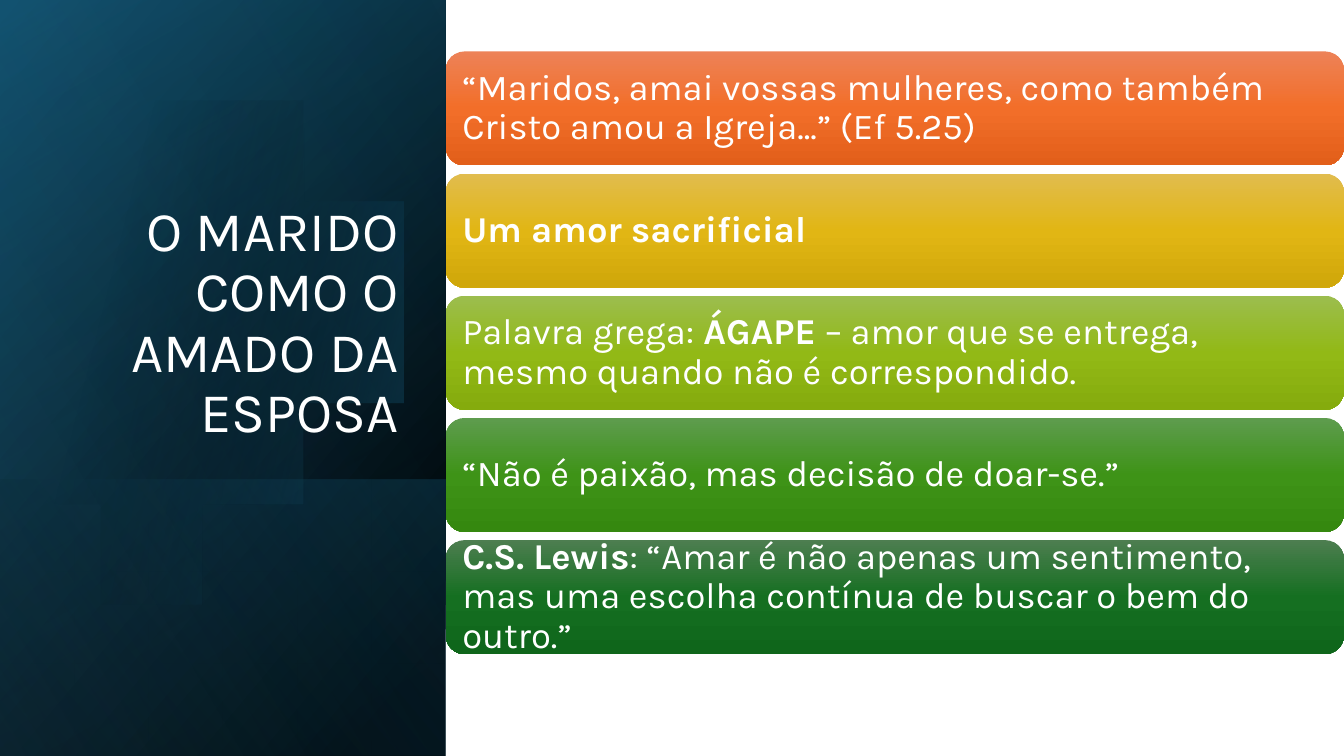
import math
import pptx
import pptx.util
import pptx.dml.color
import pptx.enum.shapes
import pptx.enum.text
import pptx.oxml
import pptx.oxml.ns

Inches, Pt = pptx.util.Inches, pptx.util.Pt
SHAPES = pptx.enum.shapes.MSO_SHAPE
ANCHOR = pptx.enum.text.MSO_ANCHOR
ALIGN = pptx.enum.text.PP_ALIGN

WIDTH, HEIGHT = 13.33, 7.5
PANEL_WIDTH = 4.42
FONT = "Karla"
COLOURS = {"white": "FFFFFF", "black": "000000", "navy": "104862",
           "teal": "156082", "sky": "46B1E1"}

TITLE = "O MARIDO COMO O AMADO DA ESPOSA"
# Each card: gradient from top to bottom, then (text, bold) runs
CARDS = [
    (("ED8257", "F26E29", "E25F1A"),
     [("“Maridos, amai vossas mulheres, como também Cristo amou a Igreja...” (Ef 5.25)", False)]),
    (("E1BC4E", "E1B614", "D0A70A"), [("Um amor sacrificial", True)]),
    (("9CBD4E", "92B916", "85AB0D"),
     [("Palavra grega: ", False), ("ÁGAPE", True),
      (" – amor que se entrega, mesmo quando não é correspondido.", False)]),
    (("5E9C4E", "3E9317", "35880F"), [("“Não é paixão, mas decisão de doar-se.”", False)]),
    (("4D7E50", "156F21", "0F661B"),
     [("C.S. Lewis", True),
      (": “Amar é não apenas um sentimento, mas uma escolha contínua de buscar o bem do outro.”", False)]),
]


def paint(shape, stops, angle):
    """Fill with a gradient of (position %, hex, opacity %) stops, without line or shadow."""
    shape.shadow.inherit = False
    shape.line.fill.background()
    shape.fill.gradient()
    gradient = shape._element.spPr.find(pptx.oxml.ns.qn("a:gradFill"))
    marks = "".join(
        f'<a:gs pos="{position * 1000}"><a:srgbClr val="{colour}">'
        f'<a:alpha val="{opacity * 1000}"/></a:srgbClr></a:gs>'
        for position, colour, opacity in stops)
    fresh = pptx.oxml.parse_xml(
        f'<a:gradFill {pptx.oxml.ns.nsdecls("a")} rotWithShape="1"><a:gsLst>{marks}</a:gsLst>'
        f'<a:lin ang="{angle * 60000}" scaled="0"/></a:gradFill>')
    gradient.getparent().replace(gradient, fresh)


def add_layer(slide, left, top, width, height, stops, angle):
    """Place a mirrored rectangle, turned a quarter, that covers the given box."""
    layer = slide.shapes.add_shape(
        SHAPES.RECTANGLE, Inches(left + (width - height) / 2),
        Inches(top + (height - width) / 2), Inches(height), Inches(width))
    layer.rotation = 90
    layer._element.spPr.find(pptx.oxml.ns.qn("a:xfrm")).set("flipH", "1")
    paint(layer, stops, angle)


def add_disc(slide, centre_x, centre_y, radius, stops, angle):
    """Draw a disc cut off by the left edge of the slide."""
    limit = math.pi - math.acos(centre_x / radius)
    steps = 120
    turns = [limit * (2 * step / steps - 1) for step in range(steps + 1)]
    rim = [(centre_x + radius * math.cos(turn), centre_y + radius * math.sin(turn))
           for turn in turns]
    outline = slide.shapes.build_freeform(*rim[0], scale=Inches(1))
    outline.add_line_segments(rim[1:], close=True)
    paint(outline.convert_to_shape(), stops, angle)


def style(paragraph, size):
    paragraph.line_spacing = 0.9
    paragraph.font.name = FONT
    paragraph.font.size = Pt(size)
    paragraph.font.color.rgb = pptx.dml.color.RGBColor.from_string(COLOURS["white"])


def add_title_panel(slide, left, top, width, height):
    black, navy, teal, sky = (COLOURS[name] for name in ("black", "navy", "teal", "sky"))
    box = (left, top, width, height)

    # Dark layered background
    add_layer(slide, *box, [(8, black, 100), (100, navy, 100)], 50)
    add_layer(slide, *box, [(0, black, 0), (99, teal, 46)], 30)
    foot = 2.74
    add_layer(slide, left, top + height - foot, width, foot,
              [(2, teal, 29), (100, black, 30)], 130)
    add_disc(slide, left + 1.43, top + 3.39, 2.29, [(29, black, 0), (100, teal, 43)], 14)
    add_layer(slide, *box, [(0, black, 0), (99, sky, 11)], 120)

    # Title
    title = slide.shapes.add_textbox(
        Inches(left + 0.64), Inches(top + 1.84), Inches(3.41), Inches(2.62)).text_frame
    title.word_wrap = True
    title.vertical_anchor = ANCHOR.BOTTOM
    title.text = TITLE
    title.paragraphs[0].alignment = ALIGN.RIGHT
    style(title.paragraphs[0], 40)


def add_card(slide, left, top, width, height, gradient, runs):
    card = slide.shapes.add_shape(
        SHAPES.ROUNDED_RECTANGLE, Inches(left), Inches(top), Inches(width), Inches(height))
    paint(card, [(50 * i, colour, 100) for i, colour in enumerate(gradient)], 90)
    frame = card.text_frame
    frame.word_wrap = True
    frame.vertical_anchor = ANCHOR.MIDDLE
    frame.margin_left = frame.margin_right = Inches(0.11)
    frame.margin_top = frame.margin_bottom = Inches(0.11)
    quote = frame.paragraphs[0]
    quote.alignment = ALIGN.LEFT
    style(quote, 26)
    for words, bold in runs:
        run = quote.add_run()
        run.text = words
        run.font.bold = bold


def add_cards(slide, left, top, width, height):
    """Stack the cards with equal gaps over the whole box."""
    gap = 0.08
    card_height = (height - gap * (len(CARDS) - 1)) / len(CARDS)
    for row, (gradient, runs) in enumerate(CARDS):
        add_card(slide, left, top + row * (card_height + gap), width, card_height, gradient, runs)


def main():
    deck = pptx.Presentation()
    deck.slide_width, deck.slide_height = Inches(WIDTH), Inches(HEIGHT)
    slide = deck.slides.add_slide(deck.slide_layouts[6])
    add_title_panel(slide, 0, 0, PANEL_WIDTH, HEIGHT)
    add_cards(slide, PANEL_WIDTH, 0.51, WIDTH - PANEL_WIDTH, 5.98)
    deck.save("out.pptx")


if __name__ == "__main__":
    main()
